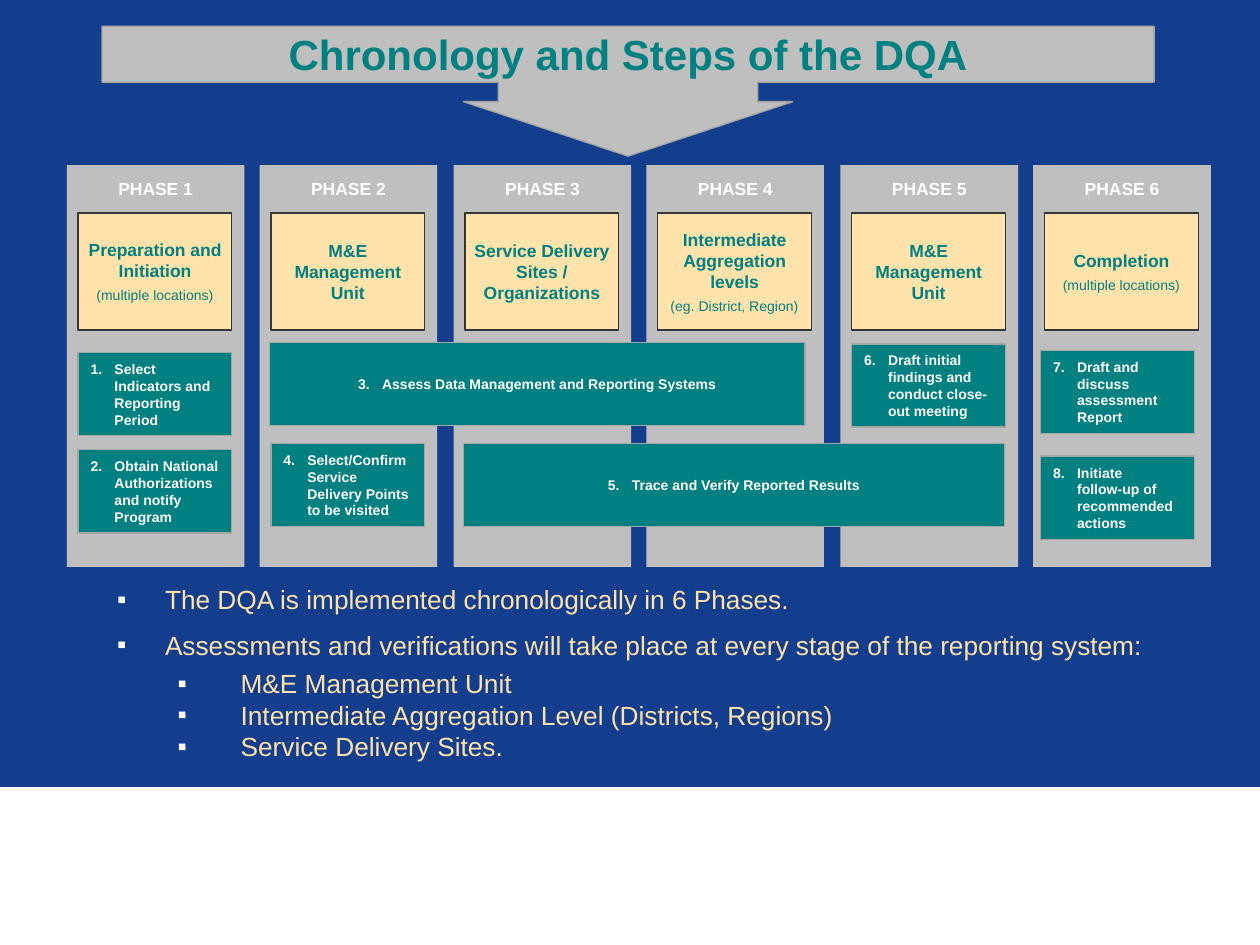
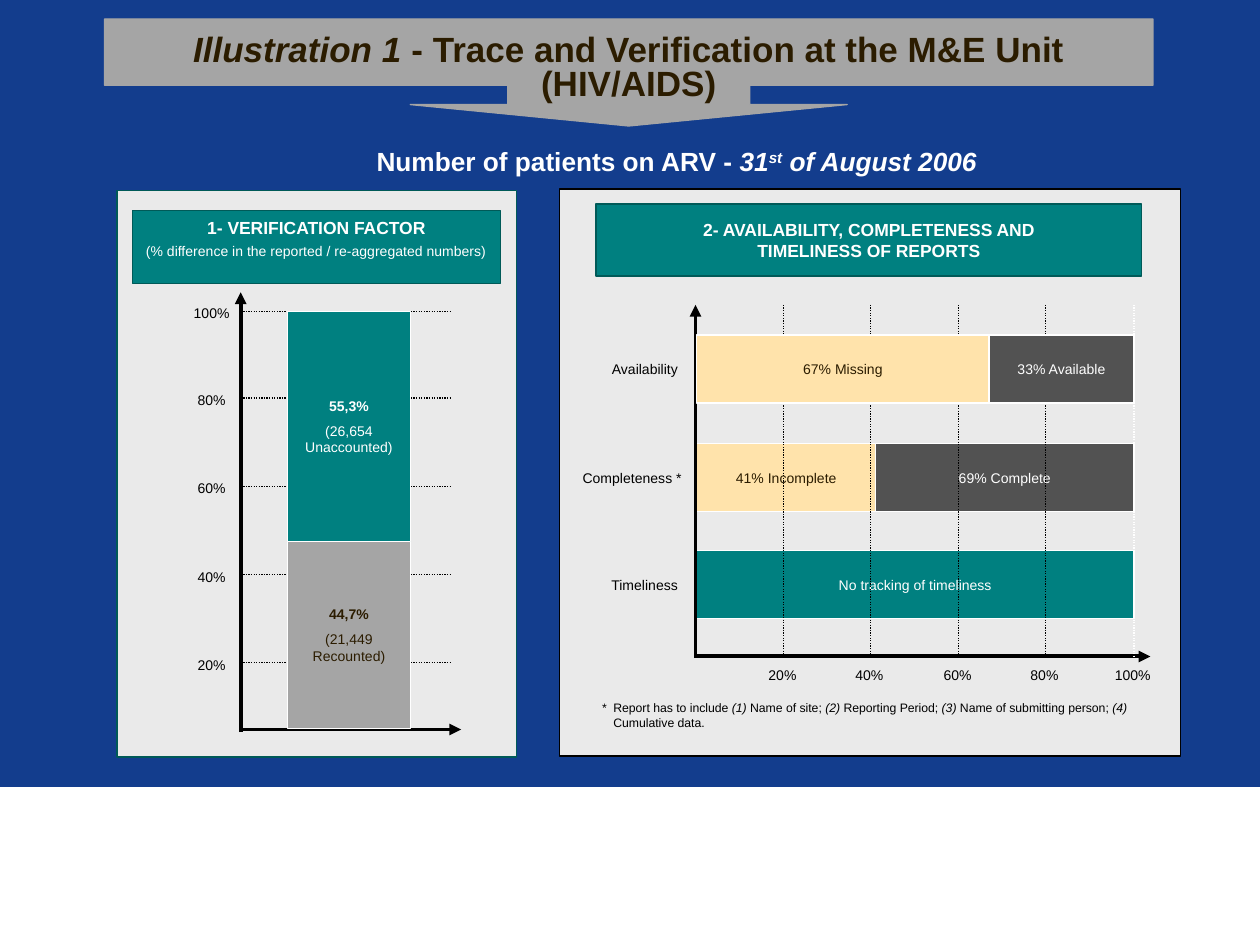
import pptx
import pptx.dml.color
import pptx.enum.dml
import pptx.enum.shapes
import pptx.enum.text
import pptx.oxml.ns
import pptx.util
from lxml import etree

EMU_PER_PX = 9144  # 100 px to the inch
FONT = "Arial"

rgb = pptx.dml.color.RGBColor.from_string
NAVY = rgb("133D8D")
WHITE = rgb("FFFFFF")
BLACK = rgb("000000")
TEAL = rgb("008080")
DARK_TEAL = rgb("005A58")
CREAM = rgb("FFE3AB")
SILVER = rgb("BFBFBF")
GREY = rgb("A5A5A5")
PALE_GREY = rgb("EAEAEA")
DARK_GREY = rgb("525252")
CHARCOAL = rgb("363636")
BROWN = rgb("2B1C00")

SHAPES = pptx.enum.shapes.MSO_SHAPE
ALIGN = pptx.enum.text.PP_ALIGN
ANCHOR = pptx.enum.text.MSO_ANCHOR

PHASES = [
    ("Preparation and Initiation", "(multiple locations)"),
    ("M&E Management Unit", None),
    ("Service Delivery Sites / Organizations", None),
    ("Intermediate Aggregation levels", "(eg. District, Region)"),
    ("M&E Management Unit", None),
    ("Completion", "(multiple locations)"),
]
# In the order of their numbers: left, top, width, alignment, text
STEPS = [
    (62, 280, 122, ALIGN.LEFT, "Select Indicators and Reporting Period"),
    (62, 357, 122, ALIGN.LEFT, "Obtain National Authorizations and notify Program"),
    (214, 272, 425, ALIGN.CENTER, "Assess Data Management and Reporting Systems"),
    (215, 352, 122, ALIGN.LEFT, "Select/Confirm Service Delivery Points to be visited"),
    (368, 352, 429, ALIGN.CENTER, "Trace and Verify Reported Results"),
    (676, 273, 122, ALIGN.LEFT, "Draft initial findings and conduct close-out meeting"),
    (826, 278, 122, ALIGN.LEFT, "Draft and discuss assessment Report"),
    (826, 362, 122, ALIGN.LEFT, "Initiate\nfollow-up of recommended actions"),
]
PERCENTS = ["20%", "40%", "60%", "80%", "100%"]


def px(length):
    return pptx.util.Emu(round(length * EMU_PER_PX))


def add_xml(parent, tag, **attributes):
    return etree.SubElement(parent, pptx.oxml.ns.qn(tag), attributes)


def write(frame, text, *, size, color, bold=False, align=ALIGN.LEFT, before=0,
          after=0, spacing=None, margin=0, hanging=0, number=None, bullet=None):
    """Add a paragraph; text is a string or a list of (string, style) runs."""
    paragraph = frame.paragraphs[0]
    if paragraph.runs:
        paragraph = frame.add_paragraph()
    paragraph.alignment = align
    paragraph.space_before = pptx.util.Pt(before)
    paragraph.space_after = pptx.util.Pt(after)
    paragraph.line_spacing = spacing
    properties = paragraph._p.get_or_add_pPr()
    properties.set("marL", str(px(margin)))
    properties.set("indent", str(px(-hanging)))
    if bullet:
        bullet_color = add_xml(properties, "a:buClr")
        add_xml(bullet_color, "a:srgbClr", val=str(WHITE))
        add_xml(properties, "a:buFont", typeface=FONT)
        add_xml(properties, "a:buChar", char=bullet)
    elif number:
        add_xml(properties, "a:buAutoNum", type="arabicPeriod", startAt=str(number))
    runs = [(text, "")] if isinstance(text, str) else text
    for content, style in runs:
        for index, line in enumerate(content.split("\n")):
            if index:
                paragraph.add_line_break()
            run = paragraph.add_run()
            run.text = line
            run.font.name = FONT
            run.font.size = pptx.util.Pt(size)
            run.font.bold = bold
            run.font.italic = "italic" in style
            run.font.color.rgb = color
            if "superscript" in style:
                run.font._element.set("baseline", "30000")


def place(shape, left, top, width, height):
    shape.left, shape.top = px(left), px(top)
    shape.width, shape.height = px(width), px(height)


def add_block(slide, left, top, width, height, fill, line=None,
              kind=SHAPES.RECTANGLE):
    """Add a filled shape and return it, ready for centred text."""
    shape = slide.shapes.add_shape(kind, px(left), px(top), px(width), px(height))
    shape.shadow.inherit = False
    shape.fill.solid()
    shape.fill.fore_color.rgb = fill
    if line is None:
        shape.line.fill.background()
    else:
        shape.line.color.rgb = line
        shape.line.width = pptx.util.Pt(0.75)
    shape.text_frame.word_wrap = True
    shape.text_frame.vertical_anchor = ANCHOR.MIDDLE
    return shape


def add_label(slide, left, top, width, height, text, **text_format):
    box = slide.shapes.add_textbox(px(left), px(top), px(width), px(height))
    box.text_frame.word_wrap = True
    write(box.text_frame, text, **text_format)


def add_line(slide, start, end, color=BLACK, arrow=False):
    """Add a thick axis with an arrowhead, or a thin dotted gridline."""
    connector = slide.shapes.add_connector(
        pptx.enum.shapes.MSO_CONNECTOR.STRAIGHT, *map(px, start + end))
    connector.line.color.rgb = color
    connector.line.width = pptx.util.Pt(2.25 if arrow else 0.75)
    if arrow:
        add_xml(connector.line._get_or_add_ln(), "a:tailEnd", type="triangle")
    else:
        connector.line.dash_style = pptx.enum.dml.MSO_LINE.ROUND_DOT
    add_xml(connector._element.spPr, "a:effectLst")


def add_slide(presentation, layout_index):
    slide = presentation.slides.add_slide(presentation.slide_layouts[layout_index])
    add_block(slide, 0, 625, 1000, 125, WHITE, WHITE)
    return slide


def add_title(slide, callout_box, adjustments, fill, title_box, text, **text_format):
    """Add the arrow callout and put the title placeholder in front of it."""
    callout = add_block(slide, *callout_box, fill, GREY, SHAPES.DOWN_ARROW_CALLOUT)
    for index, value in enumerate(adjustments):
        callout.adjustments[index] = value
    title = slide.shapes.title
    place(title, *title_box)
    title.text_frame.auto_size = pptx.enum.text.MSO_AUTO_SIZE.NONE
    title.text_frame.vertical_anchor = ANCHOR.MIDDLE
    write(title.text_frame, text, bold=True, align=ALIGN.CENTER, **text_format)
    slide.shapes._spTree.append(title._element)


def add_phase(slide, index, name, note):
    left = round(53 + 153.4 * index)
    add_block(slide, left, 131, 141, 319, SILVER)
    frame = add_block(slide, left + 9, 169, 122, 93, CREAM, CHARCOAL).text_frame
    frame.margin_left = frame.margin_right = px(7)
    frame.margin_top = frame.margin_bottom = px(3)
    write(frame, name, size=10, color=TEAL, bold=True, align=ALIGN.CENTER,
          after=3 if note else 0)
    if note:
        write(frame, note, size=8, color=TEAL, align=ALIGN.CENTER)
    add_label(slide, left + 28, 136, 85, 27, f"PHASE {index + 1}",
              size=10, color=WHITE, bold=True, align=ALIGN.CENTER)


def add_step(slide, number, left, top, width, align, text):
    step = add_block(slide, left, top, width, 66, TEAL, GREY)
    write(step.text_frame, text, size=8, color=WHITE, bold=True, align=align,
          margin=19, hanging=19, number=number)


def add_summary(slide):
    body = slide.placeholders[1]
    place(body, 83, 458, 867, 97)
    frame = body.text_frame
    frame.auto_size = pptx.enum.text.MSO_AUTO_SIZE.NONE
    point = dict(size=15, color=CREAM, bullet="▪")
    write(frame, "The DQA is implemented chronologically in 6 Phases.",
          margin=38, hanging=38, after=4, **point)
    write(frame, "Assessments and verifications will take place at every stage "
          "of the reporting system:", margin=38, hanging=38, before=4, **point)
    levels = ["M&E Management Unit",
              "Intermediate Aggregation Level (Districts, Regions)",
              "Service Delivery Sites."]
    for index, level in enumerate(levels):
        write(frame, level, margin=98, hanging=50,
              before=0 if index else 4, **point)
        frame.paragraphs[-1].level = 1


def add_chronology_slide(presentation):
    slide = add_slide(presentation, 1)
    add_title(slide, (81, 21, 835, 103), (2.0, 1.27, 0.42, 0.43), SILVER,
              (81, 21, 835, 44), "Chronology and Steps of the DQA",
              size=24, color=TEAL)
    for index, (name, note) in enumerate(PHASES):
        add_phase(slide, index, name, note)
    for number, step in enumerate(STEPS, start=1):
        add_step(slide, number, *step)
    add_summary(slide)


def add_axis_label(slide, left, top, text):
    add_label(slide, left, top, 52, 23, text, size=8, color=BLACK,
              align=ALIGN.CENTER)


def add_verification_panel(slide):
    add_block(slide, 93, 151, 317, 450, PALE_GREY, DARK_TEAL)
    add_line(slide, (191, 581), (191, 232), arrow=True)
    add_line(slide, (191, 579), (366, 579), arrow=True)
    for index, percent in enumerate(PERCENTS):
        y = 526 - 70 * index + index // 4
        add_line(slide, (191, y), (357, y))
        add_axis_label(slide, 142, y - 10, percent)
    segments = [
        (430, 148, GREY, BROWN, "44,7%", "(21,449 Recounted)"),
        (247, 183, TEAL, WHITE, "55,3%", "(26,654 Unaccounted)"),
    ]
    for top, height, fill, color, share, count in segments:
        frame = add_block(slide, 228, top, 98, height, fill, WHITE).text_frame
        write(frame, share, size=8, color=color, bold=True, align=ALIGN.CENTER)
        write(frame, count, size=8, color=color, align=ALIGN.CENTER, before=4.5)
    frame = add_block(slide, 105, 167, 292, 58, TEAL, DARK_TEAL).text_frame
    frame.vertical_anchor = ANCHOR.TOP
    write(frame, "1- VERIFICATION FACTOR", size=10, color=WHITE, bold=True,
          align=ALIGN.CENTER)
    write(frame, "(% difference in the reported / re-aggregated numbers)",
          size=8, color=WHITE, align=ALIGN.CENTER, before=2.5)


def add_bar(slide, top, segments):
    """Add a full-width bar of (end percent, text, fill, text colour) segments."""
    left = 553
    for end_percent, text, fill, color in segments:
        right = 553 + round(347 * end_percent / 100)
        bar = add_block(slide, left, top, right - left, 54, fill, WHITE)
        write(bar.text_frame, text, size=8, color=color, align=ALIGN.CENTER)
        left = right


def add_reports_panel(slide):
    add_block(slide, 444, 150, 493, 450, PALE_GREY, BLACK)
    add_bar(slide, 352, [(41, "41% Incomplete", CREAM, BROWN),
                         (100, "69% Complete", DARK_GREY, WHITE)])
    add_bar(slide, 437, [(100, "No tracking of timeliness", TEAL, WHITE)])
    add_line(slide, (552, 522), (552, 242), arrow=True)
    add_line(slide, (551, 521), (913, 521), arrow=True)
    for step, percent in enumerate(PERCENTS, start=1):
        x = round(552 + 69.6 * step)
        add_line(slide, (x, 242), (x, 521), WHITE if percent == "100%" else BLACK)
        add_axis_label(slide, x - 27, 524, percent)
    add_bar(slide, 266, [(67, "67% Missing", CREAM, BROWN),
                         (100, "33% Available", DARK_GREY, WHITE)])
    for left, top, name in [(441, 281, "Availability"),
                            (444, 368, "Completeness *"),
                            (441, 453, "Timeliness")]:
        add_label(slide, left, top, 107, 23, name, size=8, color=BLACK,
                  align=ALIGN.RIGHT)
    header = add_block(slide, 473, 162, 433, 57, TEAL, DARK_TEAL)
    write(header.text_frame,
          "2- AVAILABILITY, COMPLETENESS AND\nTIMELINESS OF REPORTS",
          size=10, color=WHITE, bold=True, align=ALIGN.CENTER)
    footnote = [("*\tReport has to include ", ""), ("(1)", "italic"),
                (" Name of site; ", ""), ("(2)", "italic"),
                (" Reporting Period; ", ""), ("(3)", "italic"),
                (" Name of submitting person; ", ""), ("(4)", "italic"),
                (" Cumulative data.", "")]
    add_label(slide, 468, 551, 443, 33, footnote, size=7, color=BLACK,
              margin=9, hanging=9)


def add_illustration_slide(presentation):
    slide = add_slide(presentation, 5)
    add_verification_panel(slide)
    add_title(slide, (83, 15, 832, 85), (2.26, 2.04, 0.2, 0.62), GREY,
              (83, 28, 832, 54),
              [("Illustration 1 ", "italic"),
               ("- Trace and Verification at the M&E Unit (HIV/AIDS)", "")],
              size=20, color=BROWN, spacing=0.8)
    add_label(slide, 208, 110, 658, 35,
              [("Number of patients on ARV - ", ""), ("31", "italic"),
               ("st", "italic superscript"), (" of August 2006", "italic")],
              size=15, color=WHITE, bold=True, align=ALIGN.CENTER)
    add_reports_panel(slide)


def main():
    presentation = pptx.Presentation()
    presentation.slide_width, presentation.slide_height = px(1000), px(750)
    background = presentation.slide_master.background.fill
    background.solid()
    background.fore_color.rgb = NAVY
    add_chronology_slide(presentation)
    add_illustration_slide(presentation)
    presentation.save("out.pptx")


if __name__ == "__main__":
    main()
